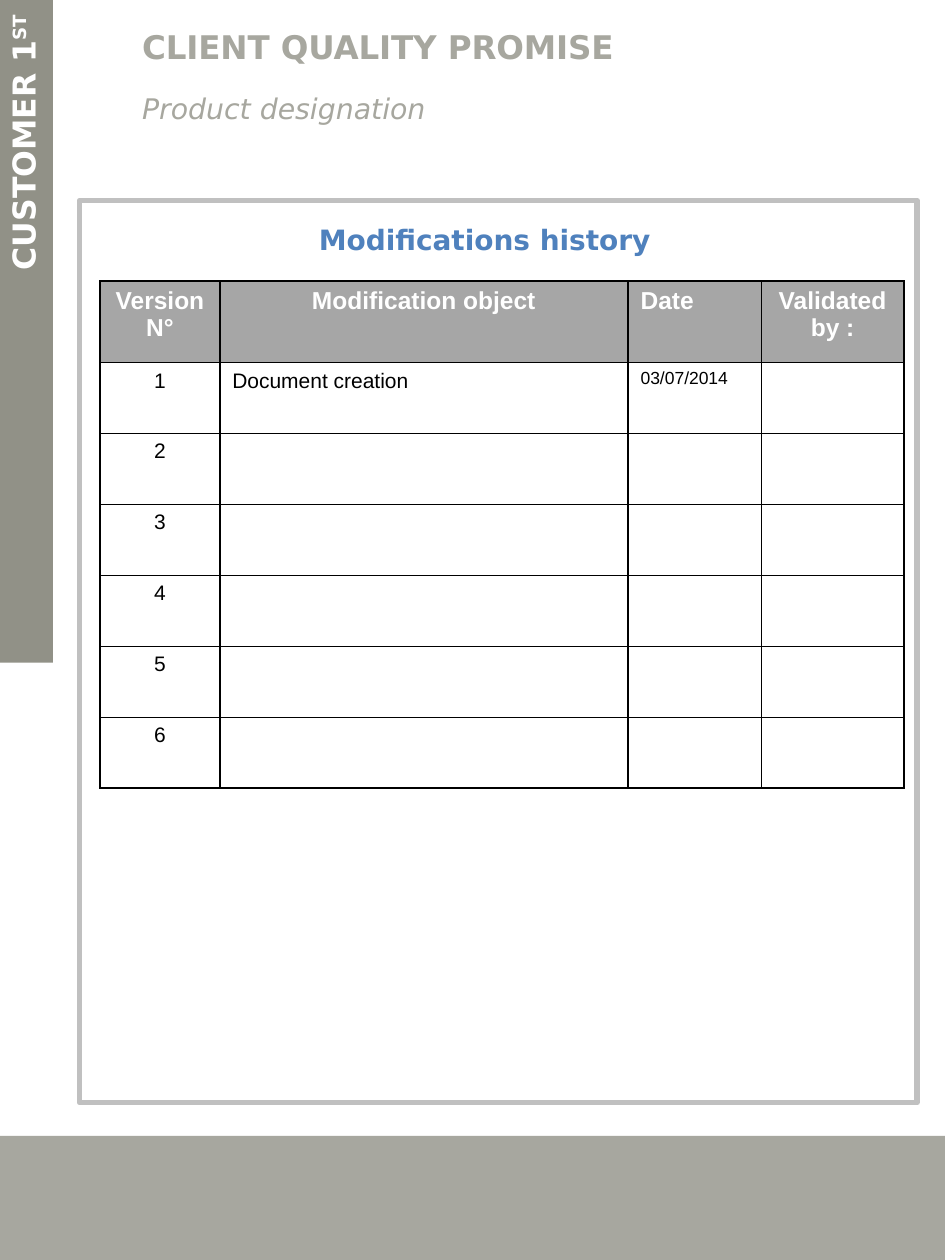
from dataclasses import dataclass

from lxml import etree
from pptx import Presentation
from pptx.dml.color import RGBColor
from pptx.enum.shapes import MSO_SHAPE
from pptx.enum.text import MSO_ANCHOR, MSO_AUTO_SIZE, PP_ALIGN
from pptx.oxml.ns import qn
from pptx.util import Cm, Pt

RECTANGLE = MSO_SHAPE.RECTANGLE
MIDDLE = MSO_ANCHOR.MIDDLE
FIT_SHAPE = MSO_AUTO_SIZE.SHAPE_TO_FIT_TEXT
LEFT, CENTER, RIGHT = PP_ALIGN.LEFT, PP_ALIGN.CENTER, PP_ALIGN.RIGHT
TITLE_ONLY = 5


@dataclass(frozen=True)
class Theme:
    heading_font: str = "DejaVu Sans"
    table_font: str = "Arial"
    white: str = "FFFFFF"
    black: str = "000000"
    stone: str = "A7A79F"
    dark_stone: str = "919187"
    frame: str = "C0C0C0"
    header: str = "A6A6A6"
    blue: str = "4F81BD"
    title: int = 32
    subtitle: int = 28
    banner: int = 18
    section: int = 16
    table_header: int = 14
    table_body: int = 12
    table_date: int = 10


THEME = Theme()

COLUMNS = [
    ("Version N°", 2.41, CENTER, CENTER, THEME.table_body),
    ("Modification object", 8.23, CENTER, LEFT, THEME.table_body),
    ("Date", 2.69, LEFT, LEFT, THEME.table_date),
    ("Validated by :", 2.87, CENTER, LEFT, THEME.table_body),
]
VERSIONS = 6
FIRST_ENTRY = ["1", "Document creation", "03/07/2014", ""]


def style_span(span, size, color, font=THEME.heading_font, bold=False, italic=False, raised=False):
    span.font.name = font
    span.font.size = Pt(size)
    span.font.bold = bold
    span.font.italic = italic
    span.font.color.rgb = RGBColor.from_string(color)
    if raised:
        span._r.get_or_add_rPr().set("baseline", "30000")


def add_box(page, left, top, width, height, fill=None, line=None, line_width=3):
    box = page.shapes.add_shape(RECTANGLE, Cm(left), Cm(top), Cm(width), Cm(height))
    box.shadow.inherit = False
    if fill:
        box.fill.solid()
        box.fill.fore_color.rgb = RGBColor.from_string(fill)
    else:
        box.fill.background()
    if line:
        box.line.color.rgb = RGBColor.from_string(line)
        box.line.width = Pt(line_width)
    else:
        box.line.fill.background()
    return box


def add_title(page):
    title = page.shapes.title
    title.left, title.top, title.width, title.height = Cm(1.4), Cm(0.89), Cm(13.49), Cm(1.78)
    frame = title.text_frame
    frame.text = "CLIENT QUALITY PROMISE\nProduct designation"
    frame.word_wrap = True
    frame.vertical_anchor = MIDDLE
    frame.auto_size = FIT_SHAPE
    heading, subtitle = frame.paragraphs
    for para in frame.paragraphs:
        para.alignment = LEFT
        para.line_spacing = 0.8
        properties = para._p.get_or_add_pPr()
        properties.set("marL", str(Cm(1.24)))
        properties.set("indent", str(Cm(-0.03)))
    subtitle.space_before = Pt(5.6)
    style_span(heading.runs[0], THEME.title, THEME.stone, bold=True, raised=True)
    style_span(subtitle.runs[0], THEME.subtitle, THEME.stone, italic=True, raised=True)


def add_side_banner(page):
    length, thickness = 13.36, 1.07
    offset = (length - thickness) / 2
    banner = add_box(page, -offset, offset, length, thickness, THEME.dark_stone)
    banner.rotation = 270
    frame = banner.text_frame
    frame.margin_left = frame.margin_right = Cm(0.3)
    frame.vertical_anchor = MIDDLE
    para = frame.paragraphs[0]
    para.alignment = RIGHT
    para.line_spacing = 0.8
    for text, raised in (("CUSTOMER 1", False), ("ST", True)):
        span = para.add_run()
        span.text = text
        style_span(span, THEME.banner, THEME.white, bold=True, raised=raised)


def add_section_heading(page):
    box = add_box(page, 6.43, 4.37, 6.96, 0.94, THEME.white)
    frame = box.text_frame
    frame.text = "Modifications history"
    frame.margin_left = 0
    frame.word_wrap = False
    frame.auto_size = FIT_SHAPE
    frame.vertical_anchor = MSO_ANCHOR.TOP
    para = frame.paragraphs[0]
    para.alignment = LEFT
    style_span(para.runs[0], THEME.section, THEME.blue, bold=True)


def add_borders(cell):
    properties = cell._tc.get_or_add_tcPr()
    for position, side in enumerate(("lnL", "lnR", "lnT", "lnB")):
        line = etree.Element(qn("a:" + side), w=str(Pt(1)))
        fill = etree.SubElement(line, qn("a:solidFill"))
        etree.SubElement(fill, qn("a:srgbClr"), val=THEME.black)
        properties.insert(position, line)


def fill_cell(cell, text, alignment, size, color, fill, bold):
    cell.fill.solid()
    cell.fill.fore_color.rgb = RGBColor.from_string(fill)
    add_borders(cell)
    if text:
        cell.text = text
        para = cell.text_frame.paragraphs[0]
        para.alignment = alignment
        style_span(para.runs[0], size, color, THEME.table_font, bold)


def add_history_table(page):
    header_height, row_height = 1.65, 1.43
    width = sum(column[1] for column in COLUMNS)
    height = header_height + VERSIONS * row_height
    table = page.shapes.add_table(
        VERSIONS + 1, len(COLUMNS), Cm(2.02), Cm(5.66), Cm(width), Cm(height)
    ).table
    for row in table.rows:
        row.height = Cm(row_height)
    table.rows[0].height = Cm(header_height)
    entries = [FIRST_ENTRY] + [[str(n), "", "", ""] for n in range(2, VERSIONS + 1)]
    for index, (label, column_width, header_align, body_align, size) in enumerate(COLUMNS):
        table.columns[index].width = Cm(column_width)
        fill_cell(table.cell(0, index), label, header_align, THEME.table_header,
                  THEME.white, THEME.header, True)
        for number, entry in enumerate(entries, start=1):
            fill_cell(table.cell(number, index), entry[index], body_align, size,
                      THEME.black, THEME.white, False)


def main():
    deck = Presentation()
    deck.slide_width, deck.slide_height = Cm(19.05), Cm(25.4)
    page = deck.slides.add_slide(deck.slide_layouts[TITLE_ONLY])
    add_box(page, 0, 22.9, 19.05, 2.5, THEME.stone)
    add_box(page, 1.6, 4.04, 16.89, 18.19, line=THEME.frame)
    add_history_table(page)
    add_side_banner(page)
    add_title(page)
    add_section_heading(page)
    deck.save("out.pptx")


if __name__ == "__main__":
    main()
